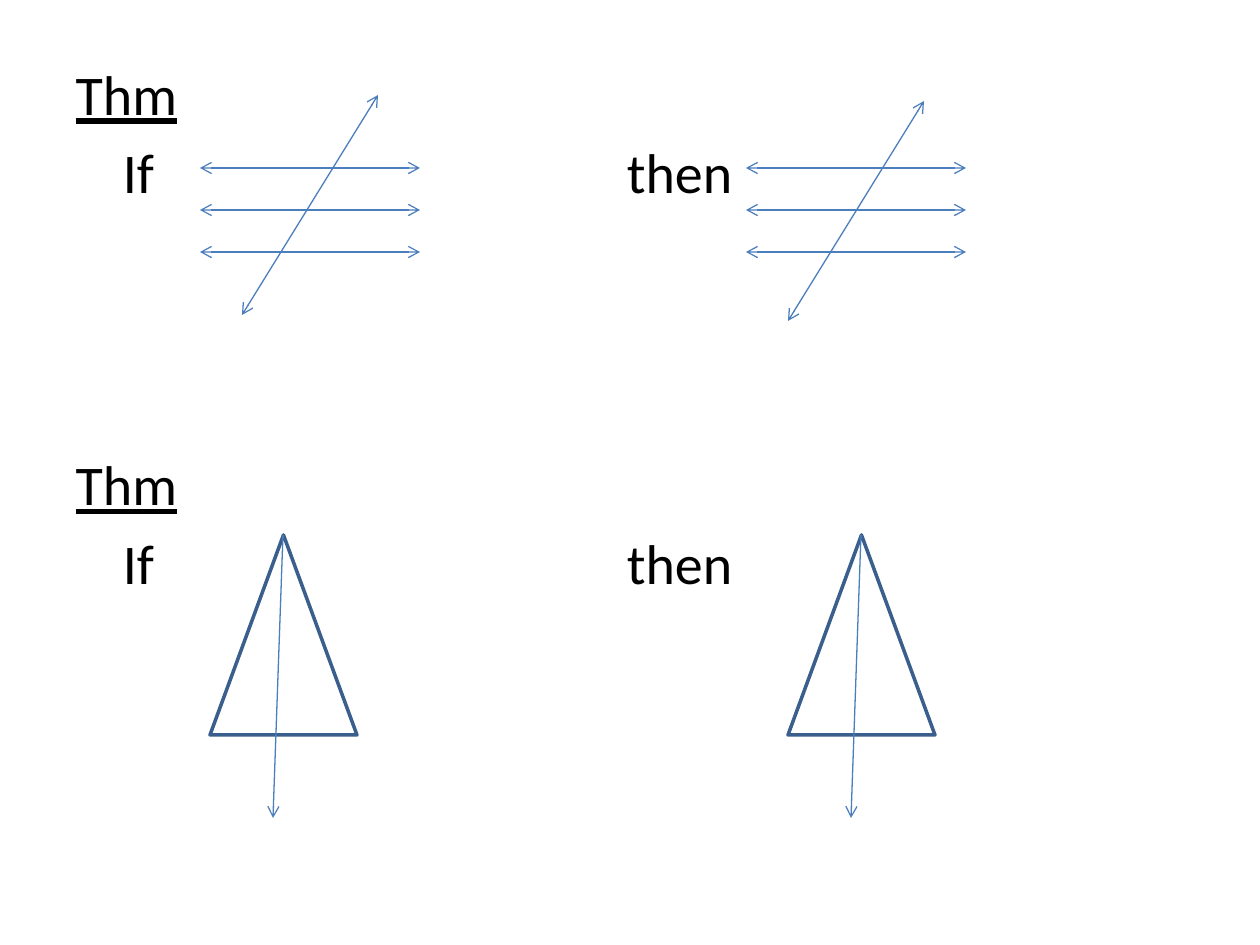
from dataclasses import dataclass

from lxml.etree import SubElement
from pptx import Presentation
from pptx.dml.color import RGBColor
from pptx.enum.shapes import MSO_CONNECTOR as CONN, MSO_SHAPE as SHAPE
from pptx.enum.text import MSO_AUTO_SIZE as AUTOSIZE
from pptx.oxml.ns import qn
from pptx.util import Emu, Pt


@dataclass(frozen=True)
class Theme:
    font: str = "Calibri"
    text_size: int = 32
    text: RGBColor = RGBColor(0x00, 0x00, 0x00)
    arrow: RGBColor = RGBColor(0x4B, 0x7E, 0xBC)
    arrow_width: float = 0.75
    triangle: RGBColor = RGBColor(0x3A, 0x5F, 0x8C)
    triangle_width: float = 2


THEME = Theme()
SCALE = 914400 / 126  # EMU per px
TAB_WIDTH = 126  # px between default tab stops
THEOREM_GAP = 140  # points between the two theorems


def px(*lengths):
    return [Emu(round(n * SCALE)) for n in lengths]


def add_text(p, text, *, underline=False, space_before=None):
    r = p.add_run()
    r.text = text
    r.font.name = THEME.font
    r.font.size = Pt(THEME.text_size)
    r.font.color.rgb = THEME.text
    r.font.underline = underline
    if space_before is not None:
        p.space_before = Pt(space_before)
    pPr = p._p.get_or_add_pPr()
    pPr.set("defTabSz", str(px(TAB_WIDTH)[0]))
    SubElement(pPr, qn("a:buNone"))


def fill_body(sp):
    sp.left, sp.top, sp.width, sp.height = px(63, 53, 1134, 791)
    tf = sp.text_frame
    tf.auto_size = AUTOSIZE.NONE
    p = tf.paragraphs[0]
    for gap in (None, THEOREM_GAP):
        if gap:
            p = tf.add_paragraph()
        add_text(p, "Thm", underline=True, space_before=gap)
        add_text(tf.add_paragraph(), "\tIf\t\t\t\tthen")


def add_arrow(s, x1, y1, x2, y2, ends=("headEnd", "tailEnd")):
    line = s.shapes.add_connector(CONN.STRAIGHT, *px(x1, y1, x2, y2))
    line.line.color.rgb = THEME.arrow
    line.line.width = Pt(THEME.arrow_width)
    ln = line.line._get_or_add_ln()
    for end in ends:
        SubElement(ln, qn(f"a:{end}"), type="arrow")
    SubElement(line._element.spPr, qn("a:effectLst"))


def add_parallels(s, left):
    """Three parallel lines with an arrowhead at both ends."""
    for y in (168, 210, 252):
        add_arrow(s, left, y, left + 220, y)


def add_transversal(s, left, top):
    add_arrow(s, left, top + 220, left + 136, top)


def add_bisected_triangle(s, left, top):
    """Triangle with a ray running from its apex through the base."""
    sp = s.shapes.add_shape(SHAPE.ISOSCELES_TRIANGLE, *px(left, top, 147, 200))
    sp.shadow.inherit = False
    sp.fill.background()
    sp.line.color.rgb = THEME.triangle
    sp.line.width = Pt(THEME.triangle_width)
    add_arrow(s, left + 73, top, left + 63, top + 283, ends=("tailEnd",))


def main():
    prs = Presentation()
    prs.slide_width, prs.slide_height = px(1260, 945)
    s = prs.slides.add_slide(prs.slide_layouts[1])
    title = s.shapes.title._element
    title.getparent().remove(title)
    fill_body(s.placeholders[1])

    for left in (200, 746):
        add_parallels(s, left)
    for left, top in ((242, 95), (788, 101)):
        add_transversal(s, left, top)
    for left in (210, 788):
        add_bisected_triangle(s, left, 535)
    prs.save("out.pptx")


if __name__ == "__main__":
    main()
